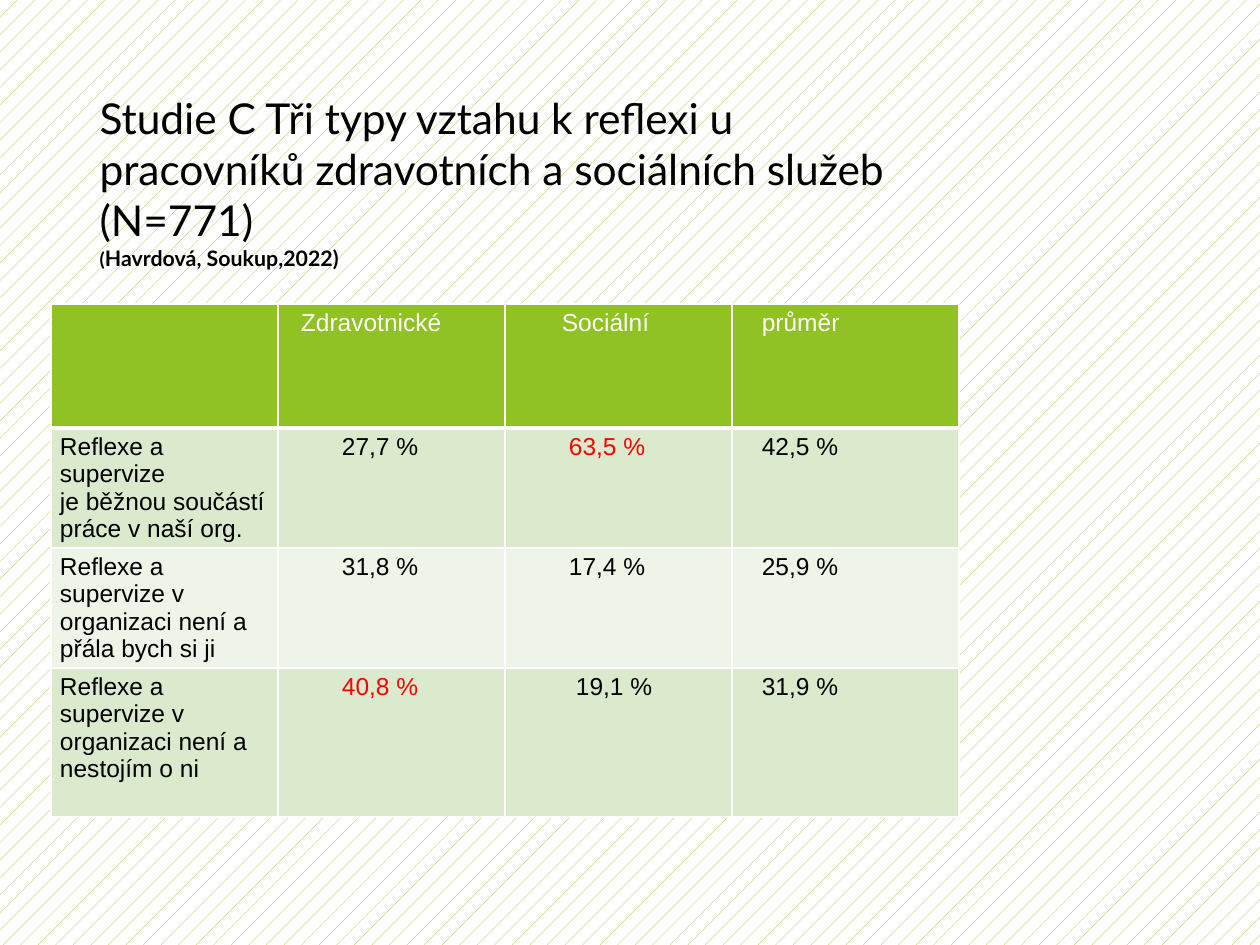
from dataclasses import dataclass

from lxml.etree import SubElement
from pptx import Presentation
from pptx.dml.color import RGBColor
from pptx.enum.dml import MSO_PATTERN
from pptx.enum.text import MSO_ANCHOR, MSO_AUTO_SIZE, PP_ALIGN
from pptx.oxml.ns import qn
from pptx.util import Pt

PX = 914400 // 126


@dataclass(frozen=True)
class Theme:
    green: str = "90C226"
    band_dark: str = "DBE9CD"
    band_light: str = "EEF4E8"
    white: str = "FFFFFF"
    black: str = "000000"
    red: str = "FF0000"
    title_font: str = "Lato"
    table_font: str = "Arial"
    title_size: float = 24.3
    bracket_size: float = 10.8
    source_size: float = 12.2
    table_size: float = 14


T = Theme()

TITLE = "Studie C Tři typy vztahu k reflexi u pracovníků zdravotních a sociálních služeb (N=771) "
SOURCE = [("(", T.bracket_size), ("Havrdová, Soukup,2022)", T.source_size)]
ROWS = [
    ["", "Zdravotnické", "Sociální", "průměr"],
    ["Reflexe a supervize\nje běžnou součástí práce v naší org.", "27,7 %", "63,5 %", "42,5 %"],
    ["Reflexe a supervize v organizaci není a přála bych si ji", "31,8 %", "17,4 %", "25,9 %"],
    ["Reflexe a supervize v organizaci není a nestojím o ni", "40,8 %", "19,1 %", "31,9 %"],
]
HIGHLIGHTS = {(1, 2), (3, 1)}

TITLE_BOX = (87, 86, 871, 189)
TABLE_LEFT, TABLE_TOP, COL_WIDTH = 51, 304, 227
ROW_HEIGHTS = [124, 119, 119, 149]
# left insets of the cells
HEADER_INSETS = [9, 23, 57, 30]
BODY_INSETS = [9, 64, 64, 30]
SPECIAL_INSETS = {(3, 2): 71}


def px(n):
    return n * PX


def rgb(value):
    return RGBColor.from_string(value)


def set_borders(cell, bottom):
    """Draw white borders, 1 pt except for the bottom one."""
    tc_pr = cell._tc.get_or_add_tcPr()
    widths = {"lnL": 1, "lnR": 1, "lnT": 1, "lnB": bottom}
    for i, (tag, width) in enumerate(widths.items()):
        ln = SubElement(tc_pr, qn(f"a:{tag}"), w=str(Pt(width)))
        fill = SubElement(ln, qn("a:solidFill"))
        SubElement(fill, qn("a:srgbClr"), val=T.white)
        tc_pr.insert(i, ln)


def add_title(s):
    title = s.shapes.title
    title.left, title.top, title.width, title.height = map(px, TITLE_BOX)
    tf = title.text_frame
    tf.word_wrap = True
    tf.auto_size = MSO_AUTO_SIZE.NONE
    tf.vertical_anchor = MSO_ANCHOR.TOP
    p = tf.paragraphs[0]
    p.alignment = PP_ALIGN.LEFT
    p.font.name = T.title_font
    p.font.color.rgb = rgb(T.black)
    r = p.add_run()
    r.text = TITLE
    r.font.size = Pt(T.title_size)
    p.add_line_break()
    for text, size in SOURCE:
        r = p.add_run()
        r.text = text
        r.font.size = Pt(size)
        r.font.bold = True


def fill_cell(cell, row, col, text):
    header = row == 0
    if header:
        fill, color = T.green, T.white
    else:
        fill = T.band_dark if row % 2 else T.band_light
        color = T.red if (row, col) in HIGHLIGHTS else T.black
    insets = HEADER_INSETS if header else BODY_INSETS
    cell.margin_left = px(SPECIAL_INSETS.get((row, col), insets[col]))
    cell.margin_right = px(9)
    cell.margin_top = cell.margin_bottom = px(5)
    cell.fill.solid()
    cell.fill.fore_color.rgb = rgb(fill)
    set_borders(cell, bottom=3 if header else 1)
    cell.text = text
    for p in cell.text_frame.paragraphs:
        p.font.name = T.table_font
        p.font.size = Pt(T.table_size)
        p.font.bold = False
        p.font.color.rgb = rgb(color)


def add_results(s):
    cols = len(ROWS[0])
    frame = s.shapes.add_table(len(ROWS), cols, px(TABLE_LEFT), px(TABLE_TOP),
                               px(COL_WIDTH * cols), px(sum(ROW_HEIGHTS)))
    table = frame.table
    for column in table.columns:
        column.width = px(COL_WIDTH)
    for row, (texts, height) in enumerate(zip(ROWS, ROW_HEIGHTS)):
        table.rows[row].height = px(height)
        for col, text in enumerate(texts):
            fill_cell(table.cell(row, col), row, col, text)


def main():
    prs = Presentation()
    prs.slide_width, prs.slide_height = px(1260), px(945)
    s = prs.slides.add_slide(prs.slide_layouts[5])
    background = s.background.fill
    background.patterned()
    background.pattern = MSO_PATTERN.PERCENT_5
    background.fore_color.rgb = rgb(T.green)
    background.back_color.rgb = rgb(T.white)
    add_title(s)
    add_results(s)
    prs.save("out.pptx")


if __name__ == "__main__":
    main()
